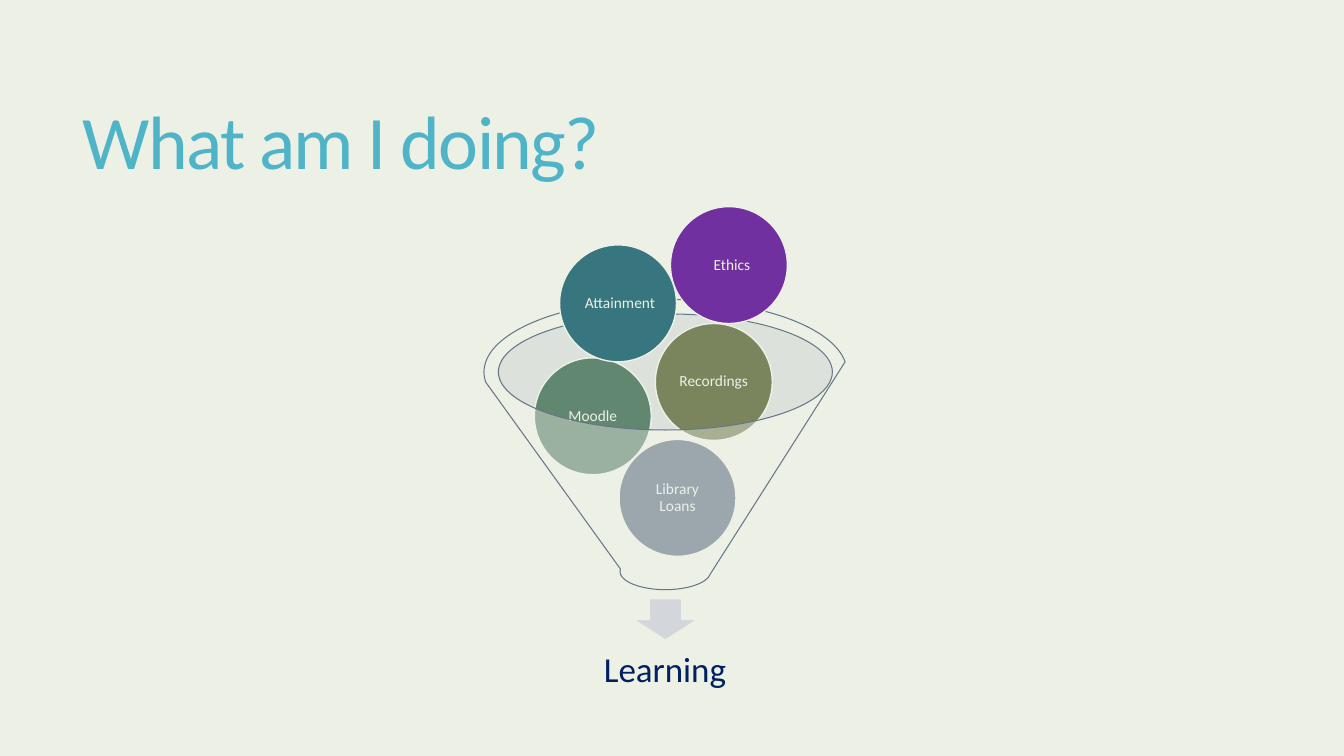
from dataclasses import dataclass
from typing import Optional

from lxml import etree
from pptx import Presentation
from pptx.dml.color import RGBColor
from pptx.enum.shapes import MSO_SHAPE
from pptx.enum.text import MSO_ANCHOR, PP_ALIGN
from pptx.oxml.ns import qn
from pptx.util import Inches, Pt

ELLIPSE, FUNNEL, DOWN_ARROW = MSO_SHAPE.OVAL, MSO_SHAPE.FUNNEL, MSO_SHAPE.DOWN_ARROW
MIDDLE = MSO_ANCHOR.MIDDLE
LEFT, CENTER = PP_ALIGN.LEFT, PP_ALIGN.CENTER

FONT = "Calibri"
COLORS = {
    "background": "EDF1E5",
    "title": "50B4C8",
    "mouth": "C6CACF",
    "arrow": "D3D6DA",
    "outcome": "002060",
    "slate": "657689",
    "green": "618770",
    "olive": "7A855D",
    "teal": "37757F",
    "purple": "7030A0",
}
BALL_SIZE = 1.16
BALL_INSET = 0.02


@dataclass
class Ball:
    label: str
    left: float
    top: float
    color: str
    label_shift: float = 0  # how far the label sits right of the centre


BALLS_INSIDE = [
    Ball("Library Loans", 6.14, 4.36, "slate"),
    Ball("Moodle", 5.3, 3.55, "green"),
    Ball("Recordings", 6.5, 3.21, "olive"),
]
BALLS_ABOVE = [
    Ball("Attainment", 5.55, 2.43, "teal", 0.02),
    Ball("Ethics", 6.65, 2.05, "purple", 0.03),
]


def rgb(name: str) -> RGBColor:
    return RGBColor.from_string(COLORS[name])


def add_figure(slide, kind, box: tuple, fill: str, line: Optional[str] = None,
               line_width: float = 1, opacity: int = 100):
    """Add a flat preset shape; opacity is a percentage."""
    figure = slide.shapes.add_shape(kind, *map(Inches, box))
    figure.shadow.inherit = False
    figure.fill.solid()
    figure.fill.fore_color.rgb = rgb(fill)
    if opacity < 100:
        color = figure.fill._xPr.find(".//" + qn("a:srgbClr"))
        etree.SubElement(color, qn("a:alpha")).set("val", str(opacity * 1000))
    if line:
        figure.line.color.rgb = rgb(line)
        figure.line.width = Pt(line_width)
    else:
        figure.line.fill.background()
    return figure


def write_text(frame, text: str, size: float, color: str, align=CENTER,
               spacing: float = 0.9):
    """Write one formatted run, centred vertically, and return it."""
    frame.word_wrap = True
    frame.vertical_anchor = MIDDLE
    paragraph = frame.paragraphs[0]
    paragraph.alignment = align
    paragraph.line_spacing = spacing
    run = paragraph.add_run()
    run.text = text
    run.font.name = FONT
    run.font.size = Pt(size)
    run.font.color.rgb = rgb(color)
    return run


def set_insets(frame, inset: float, extra_left: float = 0) -> None:
    frame.margin_left = Inches(inset + extra_left)
    frame.margin_top = frame.margin_right = frame.margin_bottom = Inches(inset)


def add_ball(slide, ball: Ball) -> None:
    circle = add_figure(slide, ELLIPSE, (ball.left, ball.top, BALL_SIZE, BALL_SIZE),
                        ball.color, "background")
    set_insets(circle.text_frame, BALL_INSET, 2 * ball.label_shift)
    write_text(circle.text_frame, ball.label, 11, "background")


def main() -> None:
    prs = Presentation()
    prs.slide_width, prs.slide_height = Inches(13.33), Inches(7.5)
    slide = prs.slides.add_slide(prs.slide_layouts[5])
    slide.background.fill.solid()
    slide.background.fill.fore_color.rgb = rgb("background")

    # Title
    title = slide.shapes.title
    title.left, title.top = Inches(0.72), Inches(0.55)
    title.width, title.height = Inches(11.78), Inches(1.81)
    question = write_text(title.text_frame, "What am I doing?", 54, "title", LEFT, 0.85)
    question._r.get_or_add_rPr().set("spc", "-120")

    # Funnel mouth, arrow and outcome
    add_figure(slide, ELLIPSE, (4.93, 3.12, 3.32, 1.15), "mouth", opacity=40)
    add_figure(slide, DOWN_ARROW, (6.28, 5.94, 0.64, 0.41), "arrow", "background")
    outcome = slide.shapes.add_textbox(*map(Inches, (5.05, 6.27, 3.09, 0.77)))
    set_insets(outcome.text_frame, 0.19)
    write_text(outcome.text_frame, "Learning", 25, "outcome")

    # Balls behind the translucent funnel, then those dropping in
    for ball in BALLS_INSIDE:
        add_ball(slide, ball)
    add_figure(slide, FUNNEL, (4.8, 2.97, 3.6, 2.88), "background", "slate", 0.75, 40)
    for ball in BALLS_ABOVE:
        add_ball(slide, ball)

    prs.save("out.pptx")


if __name__ == "__main__":
    main()
